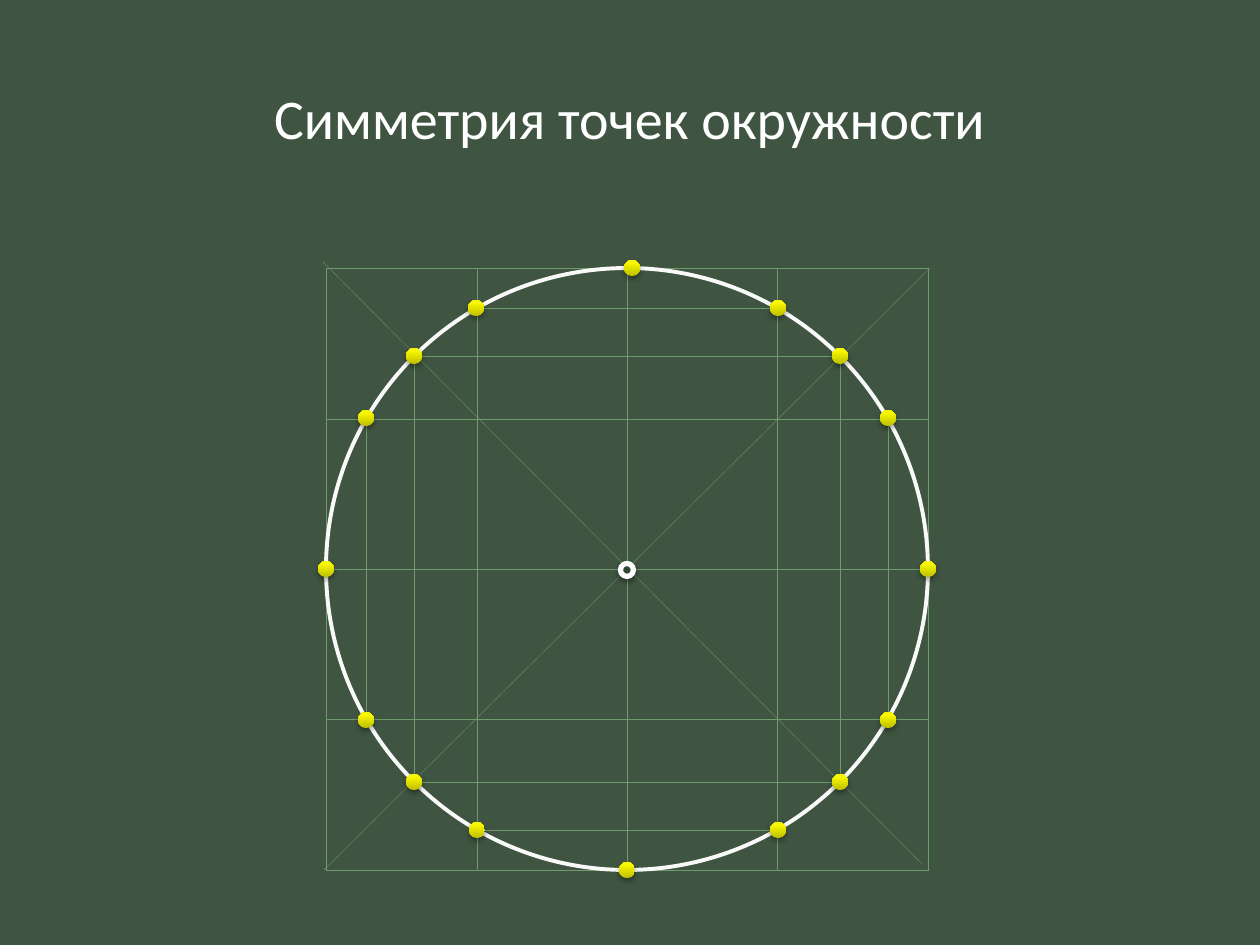
from copy import deepcopy
from dataclasses import dataclass
from math import cos, radians, sin

from pptx import Presentation
from pptx.dml.color import RGBColor
from pptx.enum.dml import MSO_LINE
from pptx.enum.shapes import MSO_CONNECTOR, MSO_SHAPE
from pptx.enum.text import MSO_ANCHOR, PP_ALIGN
from pptx.oxml.ns import qn
from pptx.util import Emu, Pt
from lxml import etree

STRAIGHT = MSO_CONNECTOR.STRAIGHT
ARC, OVAL = MSO_SHAPE.ARC, MSO_SHAPE.OVAL
DOTTED = MSO_LINE.ROUND_DOT
CENTER, MIDDLE = PP_ALIGN.CENTER, MSO_ANCHOR.MIDDLE

EMU_PER_PX = 914400 / 126
CENTER_X, CENTER_Y, RADIUS = 627, 569, 301
LEFT, RIGHT = CENTER_X - RADIUS, CENTER_X + RADIUS
TOP, BOTTOM = CENTER_Y - RADIUS, CENTER_Y + RADIUS
DOT_SIZE, CENTER_MARK_SIZE = 16, 13
DOT_ANGLES = (0, 30, 45, 60, 90, 120, 135, 150, 180, 210, 225, 240, 270, 300, 315, 330)
TOP_ANGLE, TOP_DOT_SHIFT = 270, 5
DOT_GRADIENT = ((0, "BEBE00"), (0.8, "F7F700"), (1, "F8F800"))


@dataclass(frozen=True)
class Segment:
    x1: int
    y1: int
    x2: int
    y2: int


@dataclass(frozen=True)
class Shadow:
    opacity: int
    blur: float
    distance: float


DOT_SHADOW = Shadow(35, 3.1, 1.8)
CENTER_SHADOW = Shadow(38, 3.1, 1.6)


def px(value: int) -> Emu:
    return Emu(round(value * EMU_PER_PX))


def color(value: str) -> RGBColor:
    return RGBColor.from_string(value)


def draw_segment(slide, segment: Segment) -> None:
    connector = slide.shapes.add_connector(
        STRAIGHT, px(segment.x1), px(segment.y1), px(segment.x2), px(segment.y2))
    connector.line.color.rgb = color("709B6D")
    connector.line.width = Pt(0.25)
    connector.line.dash_style = DOTTED
    etree.SubElement(connector._element.spPr, qn("a:effectLst"))


def add_shape(slide, kind, center_x: int, center_y: int, size: int):
    shape = slide.shapes.add_shape(
        kind, px(center_x) - px(size) // 2, px(center_y) - px(size) // 2, px(size), px(size))
    shape.shadow.inherit = False
    return shape


def draw_quarter(slide, rotation: int) -> None:
    arc = add_shape(slide, ARC, CENTER_X, CENTER_Y, 2 * RADIUS)
    arc.rotation = rotation
    arc.fill.background()
    arc.line.color.rgb = color("F9F9F9")
    arc.line.width = Pt(2.25)


def cast_shadow(shape, shadow: Shadow) -> None:
    effects = shape._element.spPr.find(qn("a:effectLst"))
    outer = etree.SubElement(
        effects, qn("a:outerShdw"), blurRad=str(Pt(shadow.blur)),
        dist=str(Pt(shadow.distance)), dir="5400000", rotWithShape="0")
    black = etree.SubElement(outer, qn("a:srgbClr"), val="000000")
    etree.SubElement(black, qn("a:alpha"), val=str(shadow.opacity * 1000))


def draw_dot(slide, angle: int) -> None:
    shift = TOP_DOT_SHIFT if angle == TOP_ANGLE else 0
    dot = add_shape(
        slide, OVAL, round(CENTER_X + RADIUS * cos(radians(angle))) + shift,
        round(CENTER_Y + RADIUS * sin(radians(angle))), DOT_SIZE)
    dot.line.fill.background()
    dot.fill.gradient()
    dot.fill.gradient_angle = 90
    stop_list = dot._element.spPr.find(".//" + qn("a:gsLst"))
    stop_list.append(deepcopy(stop_list[-1]))
    for stop, (position, value) in zip(dot.fill.gradient_stops, DOT_GRADIENT):
        stop.position = position
        stop.color.rgb = color(value)
    cast_shadow(dot, DOT_SHADOW)


def draw_center_mark(slide) -> None:
    mark = add_shape(slide, OVAL, CENTER_X, CENTER_Y + 1, CENTER_MARK_SIZE)
    mark.fill.solid()
    mark.fill.fore_color.rgb = color("314630")
    mark.line.color.rgb = color("FFFFFF")
    mark.line.width = Pt(3)
    cast_shadow(mark, CENTER_SHADOW)


def write_title(slide) -> None:
    title = slide.shapes.title
    title.left, title.top, title.width, title.height = px(63), px(38), px(1134), px(158)
    title.text_frame.text = "Симметрия точек окружности"
    title.text_frame.vertical_anchor = MIDDLE
    paragraph = title.text_frame.paragraphs[0]
    paragraph.alignment = CENTER
    font = paragraph.runs[0].font
    font.name, font.size = "Calibri", Pt(32)
    font.color.rgb = color("FFFFFF")


def main() -> None:
    presentation = Presentation()
    presentation.slide_width, presentation.slide_height = px(1260), px(945)
    slide = presentation.slides.add_slide(presentation.slide_layouts[5])
    slide.background.fill.solid()
    slide.background.fill.fore_color.rgb = color("405541")
    write_title(slide)

    # Square grid: four equal steps each way
    offsets = [round(RADIUS * step / 2) for step in range(-2, 3)]
    for offset in offsets:
        draw_segment(slide, Segment(LEFT, CENTER_Y + offset, RIGHT, CENTER_Y + offset))
    for offset in offsets:
        draw_segment(slide, Segment(CENTER_X + offset, TOP, CENTER_X + offset, BOTTOM))

    # Circle from four quarter arcs
    for rotation in range(0, 360, 90):
        draw_quarter(slide, rotation)

    # Diagonals
    draw_segment(slide, Segment(930, 268, 324, 870))
    draw_segment(slide, Segment(323, 262, 922, 864))

    # Chords joining mirrored points
    for angle in (45, 60):
        half = round(RADIUS * cos(radians(angle)))
        distance = round(RADIUS * sin(radians(angle)))
        for offset in (-distance, distance):
            draw_segment(slide, Segment(CENTER_X - half, CENTER_Y + offset,
                                        CENTER_X + half, CENTER_Y + offset))
            draw_segment(slide, Segment(CENTER_X + offset, CENTER_Y - half,
                                        CENTER_X + offset, CENTER_Y + half))

    # Points on the circle and its center
    for angle in DOT_ANGLES:
        draw_dot(slide, angle)
    draw_center_mark(slide)

    presentation.save("out.pptx")


if __name__ == "__main__":
    main()
